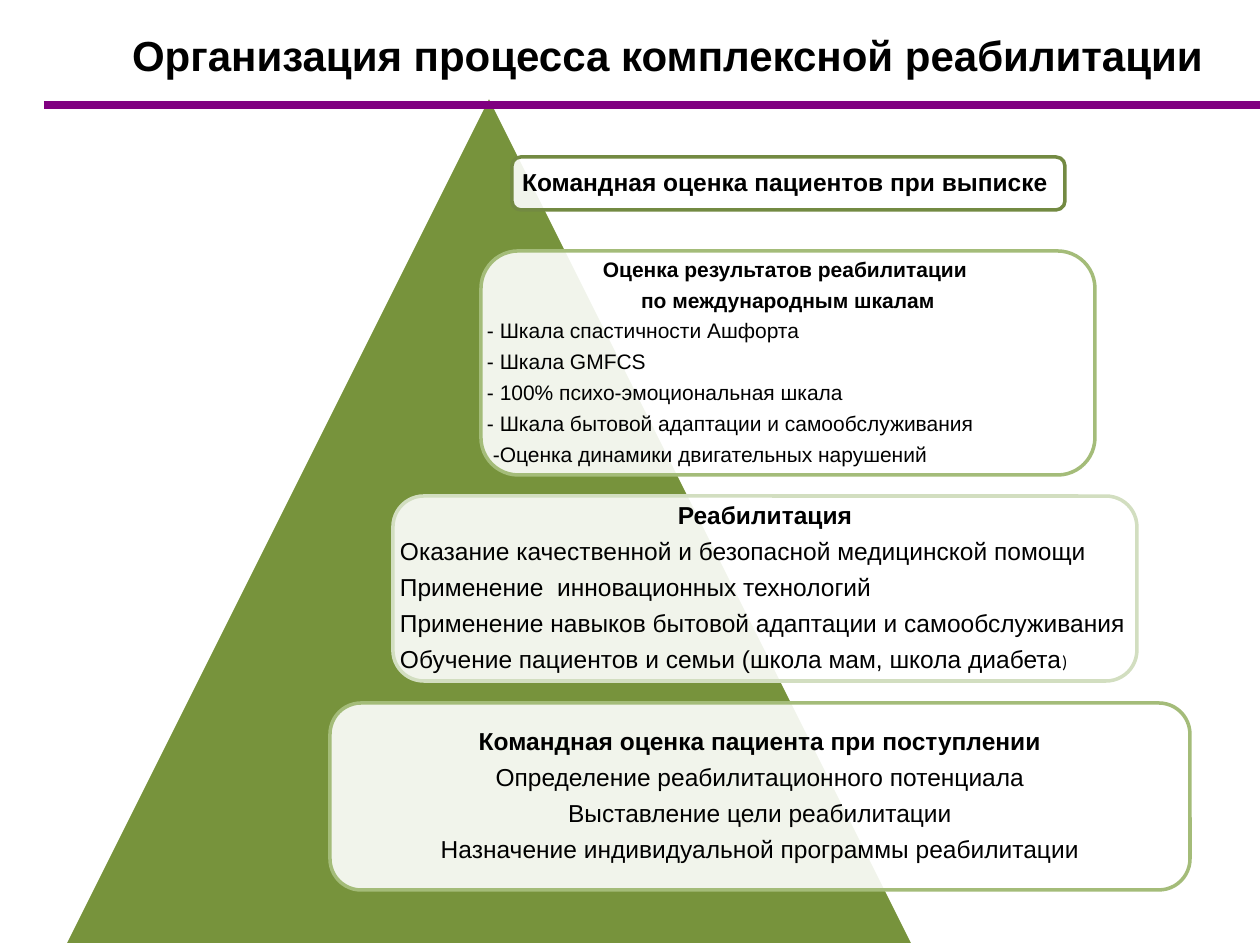
"""Build the rehabilitation process pyramid slide."""
from dataclasses import dataclass

import pptx
import pptx.dml.color
import pptx.enum.shapes
import pptx.enum.text
import pptx.oxml
import pptx.util

RGB = pptx.dml.color.RGBColor
SHAPE = pptx.enum.shapes.MSO_SHAPE
ALIGN = pptx.enum.text.PP_ALIGN
PX = 914400 / 126
BLACK = RGB(0, 0, 0)
WHITE = RGB(255, 255, 255)
GREEN = RGB(0x77, 0x93, 0x3C)
DARK_OLIVE = RGB(0x73, 0x8A, 0x42)
OLIVE = RGB(0xA4, 0xBC, 0x79)
PALE_OLIVE = RGB(0xD2, 0xDE, 0xC0)
PURPLE = RGB(0x80, 0, 0x80)


@dataclass(frozen=True)
class Stage:
    """One panel of the pyramid."""
    x: int
    y: int
    w: int
    h: int
    border: RGB
    size: int
    inset: int
    headings: tuple[str, ...]
    items: tuple[str, ...] = ()
    items_align: ALIGN = ALIGN.LEFT
    tail: str = ""


STAGES = (
    Stage(512, 157, 553, 53, DARK_OLIVE, 14, 8, ("Командная оценка пациентов при выписке ",)),
    Stage(481, 251, 614, 224, OLIVE, 12, 6,
          ("Оценка результатов реабилитации ", "по международным шкалам"),
          ("- Шкала спастичности Ашфорта", "- Шкала GMFCS",
           "- 100% психо-эмоциональная шкала",
           "- Шкала бытовой адаптации и самообслуживания",
           " -Оценка динамики двигательных нарушений")),
    Stage(393, 496, 744, 185, PALE_OLIVE, 14, 7, ("Реабилитация",),
          ("Оказание качественной и безопасной медицинской помощи",
           "Применение  инновационных технологий",
           "Применение навыков бытовой адаптации и самообслуживания",
           "Обучение пациентов и семьи (школа мам, школа диабета"), tail=")"),
    Stage(330, 703, 860, 187, OLIVE, 14, 8, ("Командная оценка пациента при поступлении",),
          ("Определение реабилитационного потенциала", "Выставление цели реабилитации",
           "Назначение индивидуальной программы реабилитации"), ALIGN.CENTER),
)


def px(v: int) -> pptx.util.Emu:
    """Turn px into EMU."""
    return pptx.util.Emu(round(v * PX))


def set_frame(tf, inset: int) -> None:
    """Wrap the text, centre it vertically and set equal insets."""
    tf.word_wrap = True
    tf.auto_size = pptx.enum.text.MSO_AUTO_SIZE.NONE
    tf.vertical_anchor = pptx.enum.text.MSO_ANCHOR.MIDDLE
    tf.margin_left = tf.margin_right = tf.margin_top = tf.margin_bottom = px(inset)


def add_run(p, text: str, size: int, bold: bool = False, font: str = "Arial") -> None:
    """Append a black run to a paragraph."""
    r = p.add_run()
    r.text = text
    r.font.size = pptx.util.Pt(size)
    r.font.name = font
    r.font.bold = bold
    r.font.color.rgb = BLACK


def set_spacing(p, size: int, align: ALIGN) -> None:
    """Set alignment and spacing in proportion to the text size."""
    p.alignment = align
    p.line_spacing = 0.9
    p.space_before = pptx.util.Pt(0)
    p.space_after = pptx.util.Pt(round(size * 0.39, 1))


def paint(sp, fill: RGB, border: RGB) -> None:
    """Give a shape a solid fill and a 2 pt outline."""
    sp.fill.solid()
    sp.fill.fore_color.rgb = fill
    sp.line.color.rgb = border
    sp.line.width = pptx.util.Pt(2)


def add_shape(s, kind: SHAPE, x: int, y: int, w: int, h: int, fill: RGB, border: RGB):
    """Add a painted preset shape without shadow."""
    sp = s.shapes.add_shape(kind, px(x), px(y), px(w), px(h))
    sp.shadow.inherit = False
    paint(sp, fill, border)
    return sp


def add_stage(s, stage: Stage) -> None:
    """Draw a translucent panel and its text."""
    box = stage.x, stage.y, stage.w, stage.h
    sp = add_shape(s, SHAPE.ROUNDED_RECTANGLE, *box, WHITE, stage.border)
    color = sp.fill._xPr.find(".//" + pptx.oxml.ns.qn("a:srgbClr"))
    pptx.oxml.xmlchemy.OxmlElement("a:alpha")
    alpha = color.makeelement(pptx.oxml.ns.qn("a:alpha"), {"val": "90000"})
    color.append(alpha)
    tf = s.shapes.add_textbox(*map(px, box)).text_frame
    set_frame(tf, stage.inset)
    lines = [(t, True, ALIGN.CENTER) for t in stage.headings]
    lines += [(t, False, stage.items_align) for t in stage.items]
    for i, (text, bold, align) in enumerate(lines):
        p = tf.add_paragraph() if i else tf.paragraphs[0]
        set_spacing(p, stage.size, align)
        add_run(p, text, stage.size, bold)
    if stage.tail:
        add_run(p, stage.tail, 10, font="Calibri")


def add_title(s) -> None:
    """Place and format the title placeholder."""
    sp = s.shapes.title
    sp.left, sp.top, sp.width, sp.height = map(px, (31, 21, 1197, 73))
    paint(sp, WHITE, WHITE)
    set_frame(sp.text_frame, 13)
    p = sp.text_frame.paragraphs[0]
    set_spacing(p, 24, ALIGN.RIGHT)
    add_run(p, "Организация процесса комплексной реабилитации ", 24, True)


def add_rule(s) -> None:
    """Draw the purple line under the title."""
    c = s.shapes.add_connector(pptx.enum.shapes.MSO_CONNECTOR.STRAIGHT,
                               px(44), px(105), px(1260), px(105))
    c.line.color.rgb = PURPLE
    c.line.width = pptx.util.Pt(4.5)
    pr = c._element.spPr
    pr.append(pr.makeelement(pptx.oxml.ns.qn("a:effectLst"), {}))


def main() -> None:
    """Build and save the presentation."""
    prs = pptx.Presentation()
    prs.slide_width, prs.slide_height = px(1260), px(945)
    s = prs.slides.add_slide(prs.slide_layouts[5])
    add_title(s)
    add_shape(s, SHAPE.ISOSCELES_TRIANGLE, 64, 95, 850, 850, GREEN, WHITE)
    for stage in STAGES:
        add_stage(s, stage)
    add_rule(s)
    prs.save("out.pptx")


if __name__ == "__main__":
    main()
